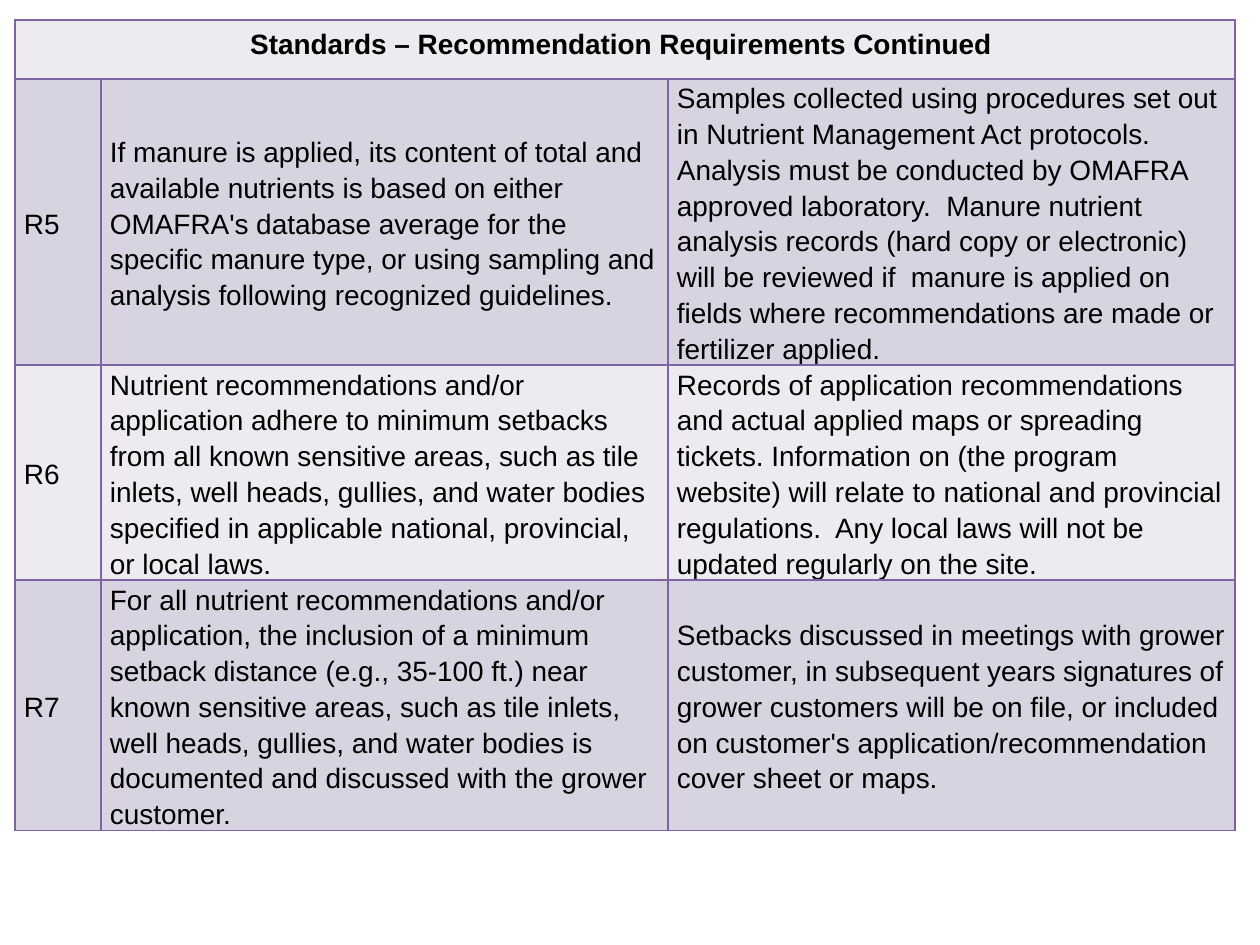
from lxml import etree
from pptx import Presentation
from pptx.dml.color import RGBColor
from pptx.enum.text import MSO_ANCHOR, PP_ALIGN
from pptx.oxml.ns import qn
from pptx.util import Pt

PX = 914400 / 126
LIGHT = RGBColor(0xED, 0xEA, 0xF0)
DARK = RGBColor(0xD8, 0xD3, 0xE0)
PURPLE = RGBColor(0x80, 0x64, 0xA2)
BLACK = RGBColor(0, 0, 0)
CENTER, LEFT = PP_ALIGN.CENTER, PP_ALIGN.LEFT
TOP, MIDDLE = MSO_ANCHOR.TOP, MSO_ANCHOR.MIDDLE

TITLE = "Standards – Recommendation Requirements Continued "
REQUIREMENTS = [
    ("R5",
     "If manure is applied, its content of total and available nutrients is "
     "based on either OMAFRA's database average for the specific manure type, "
     "or using sampling and analysis following recognized guidelines.",
     "Samples collected using procedures set out in Nutrient Management Act "
     "protocols.  Analysis must be conducted by OMAFRA approved laboratory.  "
     "Manure nutrient analysis records (hard copy or electronic) will be "
     "reviewed if  manure is applied on fields where recommendations are made "
     "or fertilizer applied."),
    ("R6",
     "Nutrient recommendations and/or application adhere to minimum setbacks "
     "from all known sensitive areas, such as tile inlets, well heads, gullies, "
     "and water bodies specified in applicable national, provincial, or local laws.",
     "Records of application recommendations and actual applied maps or "
     "spreading tickets. Information on (the program website) will relate to "
     "national and provincial regulations.  Any local laws will not be updated "
     "regularly on the site."),
    ("R7",
     "For all nutrient recommendations and/or application, the inclusion of a "
     "minimum setback distance (e.g., 35-100 ft.) near known sensitive areas, "
     "such as tile inlets, well heads, gullies, and water bodies is documented "
     "and discussed with the grower customer.",
     "Setbacks discussed in meetings with grower customer, in subsequent years "
     "signatures of grower customers will be on file, or included on customer's "
     "application/recommendation cover sheet or maps."),
]
COLUMN_WIDTHS = [86, 567, 567]
ROW_HEIGHTS = [59, 286, 215, 250]


def px(n):
    return round(n * PX)


def write(tf, text, size=16, bold=False, align=LEFT, spacing=1.0):
    p = tf.paragraphs[0]
    p.alignment = align
    p.line_spacing = spacing
    r = p.add_run()
    r.text = text
    r.font.name = "Arial"
    r.font.size = Pt(size)
    r.font.bold = bold
    r.font.color.rgb = BLACK


class Slide:
    def __init__(self, prs):
        self.s = prs.slides.add_slide(prs.slide_layouts[6])
        self.border = PURPLE

    def table(self, left, top, widths, heights):
        frame = self.s.shapes.add_table(len(heights), len(widths), px(left), px(top),
                                        px(sum(widths)), px(sum(heights)))
        table = frame.table
        for column, width in zip(table.columns, widths):
            column.width = px(width)
        for row, height in zip(table.rows, heights):
            row.height = px(height)
        return table

    def cell(self, cell, fill, inset_x=9, inset_y=0, anchor=MIDDLE):
        tc_pr = cell._tc.get_or_add_tcPr()
        for side in ("a:lnL", "a:lnR", "a:lnT", "a:lnB"):
            line = etree.SubElement(tc_pr, qn(side), w=str(Pt(1)))
            solid = etree.SubElement(line, qn("a:solidFill"))
            etree.SubElement(solid, qn("a:srgbClr"), val=str(self.border))
        cell.fill.solid()
        cell.fill.fore_color.rgb = fill
        cell.margin_left = cell.margin_right = px(inset_x)
        cell.margin_top = cell.margin_bottom = px(inset_y)
        cell.vertical_anchor = anchor


def main():
    prs = Presentation()
    prs.slide_width, prs.slide_height = px(1260), px(945)
    slide = Slide(prs)
    table = slide.table(15, 20, COLUMN_WIDTHS, ROW_HEIGHTS)

    for column in range(len(COLUMN_WIDTHS)):
        slide.cell(table.cell(0, column), LIGHT, inset_x=19, inset_y=9, anchor=TOP)
    title = table.cell(0, 0)
    title.merge(table.cell(0, len(COLUMN_WIDTHS) - 1))
    write(title.text_frame, TITLE, bold=True, align=CENTER)

    for row, texts in enumerate(REQUIREMENTS, 1):
        for column, text in enumerate(texts):
            cell = table.cell(row, column)
            slide.cell(cell, DARK if row % 2 else LIGHT)
            write(cell.text_frame, text, spacing=1.15)

    prs.save("out.pptx")


if __name__ == "__main__":
    main()
